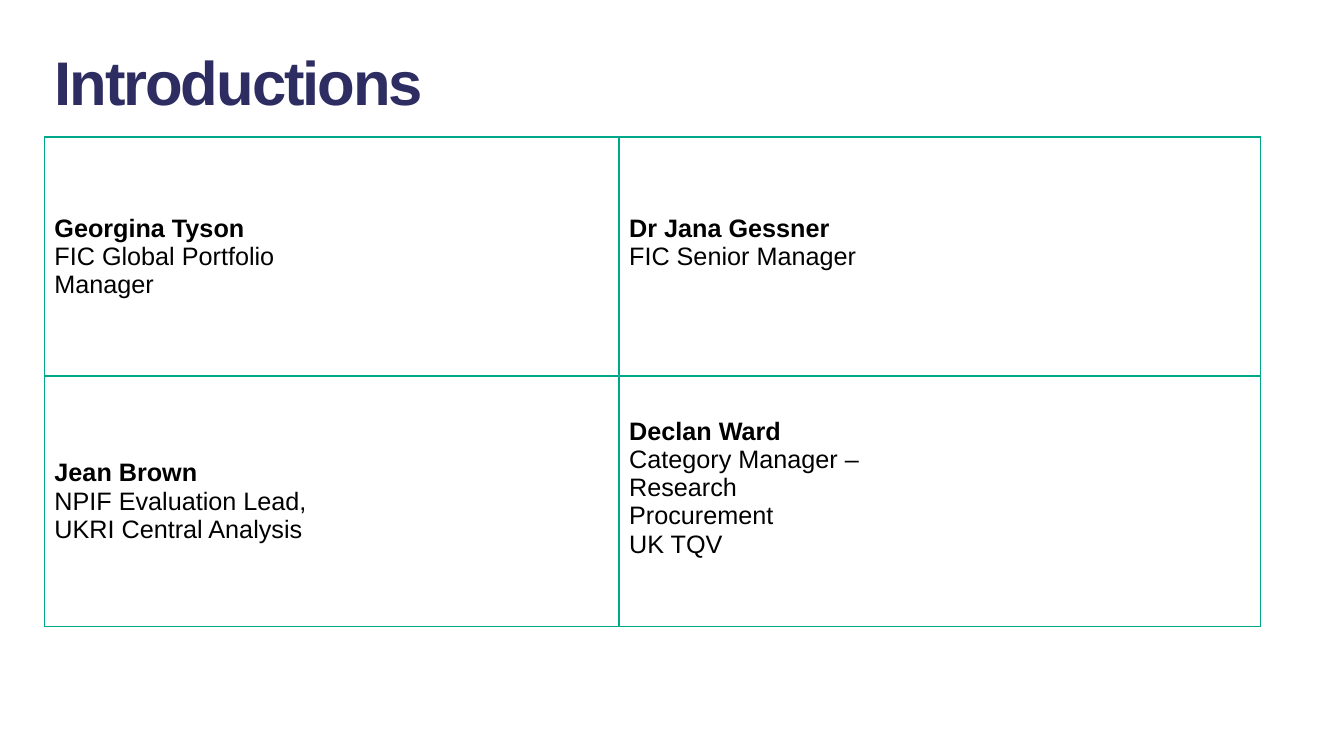
from lxml import etree
from pptx import Presentation
from pptx.dml.color import RGBColor
from pptx.enum.text import MSO_ANCHOR, PP_ALIGN
from pptx.oxml.ns import qn
from pptx.util import Inches, Pt

MIDDLE, LEFT = MSO_ANCHOR.MIDDLE, PP_ALIGN.LEFT

# Content: name first, then role lines
TITLE = "Introductions"
PEOPLE = [
    [("Georgina Tyson", "FIC Global Portfolio Manager"),
     ("Dr Jana Gessner", "FIC Senior Manager")],
    [("Jean Brown", "NPIF Evaluation Lead, UKRI Central Analysis"),
     ("Declan Ward", "Category Manager – Research", "Procurement", "UK TQV")],
]
COLUMN_WIDTHS = [2.85, 2.85, 3.18, 3.18]
ROW_HEIGHTS = [2.37, 2.49]
BOTTOM_MARGINS = [0.05, 0.32]  # people on the right sit half a line higher
LEFT_EDGE, TABLE_TOP = 0.44, 1.36
COLORS = {"title": "2E2D62", "text": "000000", "border": "00A788", "cell": "FFFFFF"}
FONT = "Arial"


def format_run(run, size, color, bold):
    run.font.name = FONT
    run.font.size = Pt(size)
    run.font.bold = bold
    run.font.color.rgb = RGBColor.from_string(COLORS[color])


def add_border(cell, side, visible):
    line = etree.SubElement(cell._tc.get_or_add_tcPr(), qn(f"a:ln{side}"), w=str(Pt(1)))
    if visible:
        fill = etree.SubElement(line, qn("a:solidFill"))
        etree.SubElement(fill, qn("a:srgbClr"), val=COLORS["border"])
    else:
        etree.SubElement(line, qn("a:noFill"))


def main():
    prs = Presentation()
    prs.slide_width, prs.slide_height = Inches(13.33), Inches(7.5)
    slide = prs.slides.add_slide(prs.slide_layouts[5])

    # Title
    title = slide.shapes.title
    title.left, title.top = Inches(LEFT_EDGE), Inches(0.38)
    title.width, title.height = Inches(6.95), Inches(0.84)
    title.text_frame.text = TITLE
    title.text_frame.vertical_anchor = MIDDLE
    heading = title.text_frame.paragraphs[0]
    heading.alignment = LEFT
    format_run(heading.runs[0], 44, "title", True)
    heading.runs[0].font._element.set("spc", "-150")

    # Table grid
    table = slide.shapes.add_table(
        len(ROW_HEIGHTS), len(COLUMN_WIDTHS), Inches(LEFT_EDGE), Inches(TABLE_TOP),
        Inches(sum(COLUMN_WIDTHS)), Inches(sum(ROW_HEIGHTS))).table
    table.first_row = table.horz_banding = False
    for column, width in zip(table.columns, COLUMN_WIDTHS):
        column.width = Inches(width)
    for row, height in zip(table.rows, ROW_HEIGHTS):
        row.height = Inches(height)

    # Each person has a text cell and an empty cell, framed as a pair
    for row, people in zip(table.rows, PEOPLE):
        for index, cell in enumerate(row.cells):
            is_text = index % 2 == 0
            for side, visible in (("L", is_text), ("R", not is_text), ("T", True), ("B", True)):
                add_border(cell, side, visible)
            cell.fill.solid()
            cell.fill.fore_color.rgb = RGBColor.from_string(COLORS["cell"])
            if is_text:
                cell.vertical_anchor = MIDDLE
                cell.margin_bottom = Inches(BOTTOM_MARGINS[index // 2])
                cell.text_frame.text = "\n".join(people[index // 2])
                for number, paragraph in enumerate(cell.text_frame.paragraphs):
                    format_run(paragraph.runs[0], 18, "text", number == 0)

    prs.save("out.pptx")


if __name__ == "__main__":
    main()
